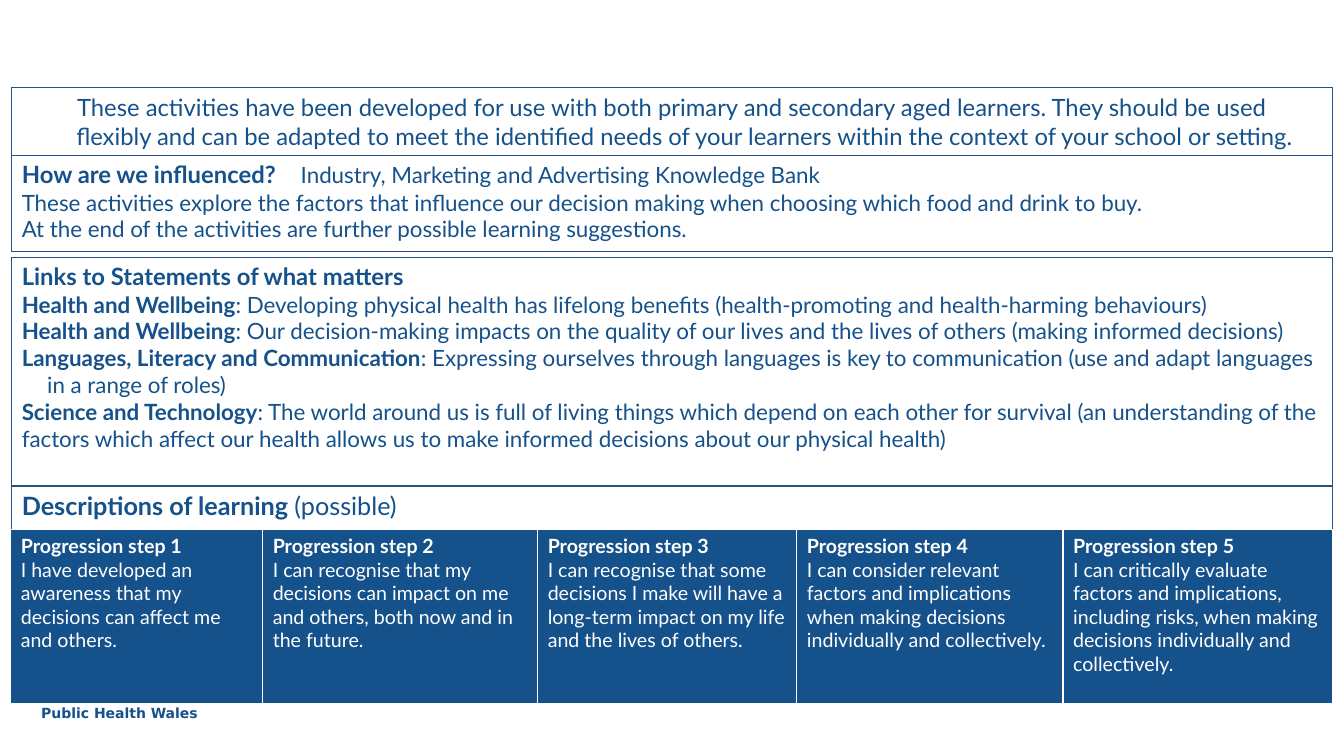
from pptx import Presentation
from pptx.dml.color import RGBColor
from pptx.enum.shapes import MSO_SHAPE
from pptx.enum.text import MSO_ANCHOR, PP_ALIGN
from pptx.oxml import parse_xml
from pptx.oxml.ns import nsdecls
from pptx.util import Cm, Pt

NAVY, WHITE, OUTLINE = "15518B", "FFFFFF", "285087"


def color(hex_code):
    return RGBColor.from_string(hex_code)


def write(frame, paragraphs, hex_code, typeface="Lato"):
    """Fill a frame with paragraphs, each a list of (text, size, bold) runs."""
    frame.word_wrap = True
    for index, runs in enumerate(paragraphs):
        paragraph = frame.paragraphs[0] if index == 0 else frame.add_paragraph()
        paragraph.alignment = PP_ALIGN.LEFT
        for text, size, bold in runs:
            run = paragraph.add_run()
            run.text = text
            run.font.color.rgb = color(hex_code)
            for attribute, value in {"name": typeface, "size": Pt(size), "bold": bold}.items():
                setattr(run.font, attribute, value)


presentation = Presentation()
presentation.slide_width, presentation.slide_height = Cm(33.87), Cm(19.05)
slide = presentation.slides.add_slide(presentation.slide_layouts[6])

# Footer
footer = slide.shapes.add_textbox(Cm(0.79), Cm(17.63), Cm(4.6), Cm(0.69))
write(footer.text_frame, [[("Public Health Wales", 10, True)]], NAVY, "DejaVu Sans")

# Outlined sections: top, height, paragraphs
intro = [[(
    "These activities have been developed for use with both primary and secondary aged learners. "
    "They should be used flexibly and can be adapted to meet the identified needs of your learners "
    "within the context of your school or setting.", 17, False)]]
influences = [
    [("How are we influenced?", 17, True),
     ("\tIndustry, Marketing and Advertising Knowledge Bank", 16, False)],
    [("These activities explore the factors that influence our decision making "
      "when choosing which food and drink to buy.", 16, False)],
    [("At the end of the activities are further possible learning suggestions.", 16, False)],
]
statements = [
    ("Health and Wellbeing", "Developing physical health has lifelong benefits "
     "(health-promoting and health-harming behaviours)"),
    ("Health and Wellbeing", "Our decision-making impacts on the quality of our lives "
     "and the lives of others (making informed decisions)"),
    ("Languages, Literacy and Communication", "Expressing ourselves through languages is key "
     "to communication (use and adapt languages in a range of roles)"),
    ("Science and Technology", "The world around us is full of living things which depend on "
     "each other for survival (an understanding of the factors which affect our health allows us "
     "to make informed decisions about our physical health)"),
]
links = [[("Links to Statements of what matters", 17, True)]]
links += [[(area, 16, True), (f": {statement}", 16, False)] for area, statement in statements]
descriptions = [[("Descriptions of learning ", 18, True), ("(possible)", 18, False)]]

frames = []
for top, height, paragraphs in [
    (2.21, 1.7, intro),
    (3.91, 2.44, influences),
    (6.48, 5.77, links),
    (12.24, 4.45, descriptions),
]:
    section = slide.shapes.add_shape(MSO_SHAPE.RECTANGLE, Cm(0.3), Cm(top), Cm(33.27), Cm(height))
    section.shadow.inherit = False
    section.fill.background()
    section.line.color.rgb = color(OUTLINE)
    section.line.width = Pt(0.75)
    section.text_frame.vertical_anchor = MSO_ANCHOR.TOP
    write(section.text_frame, paragraphs, NAVY)
    frames.append(section.text_frame)
intro_frame, influences_frame, links_frame, _ = frames

# Centred introduction with narrower text area
intro_frame.margin_left = intro_frame.margin_right = Cm(0.83)
intro_frame.paragraphs[0].alignment = PP_ALIGN.CENTER

# Hanging indents for the introduction and the languages statement
for hanging in (intro_frame.paragraphs[0], links_frame.paragraphs[3]):
    properties = hanging._p.get_or_add_pPr()
    properties.set("marL", str(Cm(0.64)))
    properties.set("indent", str(-Cm(0.64)))

# Tab stop between the question and its resource
influences_frame.paragraphs[0]._p.get_or_add_pPr().append(parse_xml(
    f'<a:tabLst {nsdecls("a")}><a:tab pos="{Cm(7.03)}" algn="l"/></a:tabLst>'))

# Progression steps
steps = [
    (6.35, "I have developed an awareness that my decisions can affect me and others."),
    (6.93, "I can recognise that my decisions can impact on me and others, both now and in the future."),
    (6.53, "I can recognise that some decisions I make will have a long-term impact on my life "
           "and the lives of others."),
    (6.71, "I can consider relevant factors and implications when making decisions "
           "individually and collectively."),
    (6.78, "I can critically evaluate factors and implications, including risks, when making "
           "decisions individually and collectively."),
]
progression = slide.shapes.add_table(
    1, len(steps), Cm(0.27), Cm(13.34), Cm(33.3), Cm(4.39)).table
progression.horz_banding = False
for index, (width, description) in enumerate(steps):
    progression.columns[index].width = Cm(width)
    cell = progression.cell(0, index)
    cell.fill.solid()
    cell.fill.fore_color.rgb = color(NAVY)
    write(cell.text_frame,
          [[(f"Progression step {index + 1}", 14, True)], [(description, 14, False)]], WHITE)

presentation.save("out.pptx")
